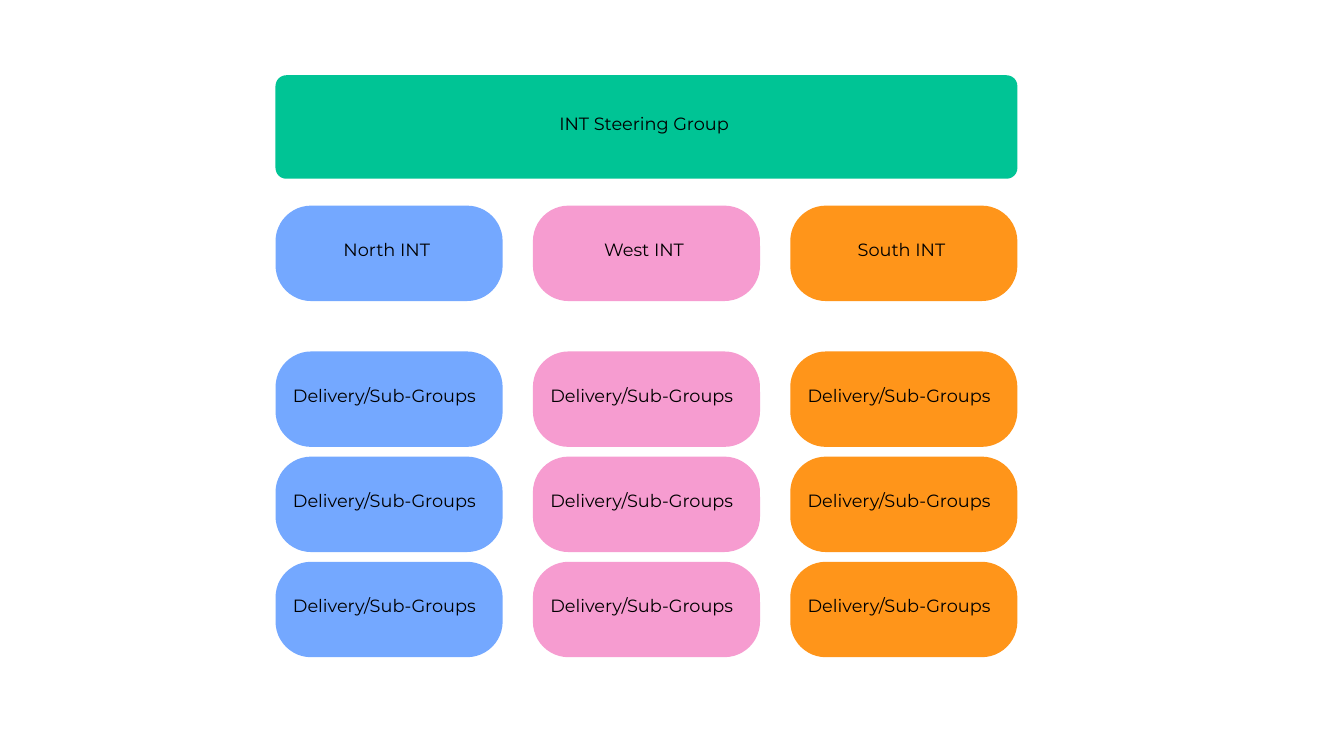
from pptx import Presentation
from pptx.dml.color import RGBColor
from pptx.enum.shapes import MSO_SHAPE as Shape
from pptx.enum.text import MSO_ANCHOR as Anchor, PP_ALIGN as Align
from pptx.util import Inches, Pt

# Content
STEERING = ("INT Steering Group", "00C495")
TEAMS = [("North INT", "74A8FF"), ("West INT", "F69CD0"), ("South INT", "FF951A")]
SUBGROUPS = ["Delivery/Sub-Groups"] * 3

# Grid, in inches
LEFT, WIDTH = 4.1, 11.04
CARD_W, CARD_H = 3.38, 1.42
COLUMN_STEP = (WIDTH - CARD_W) / (len(TEAMS) - 1)
STEERING_TOP, STEERING_H = 1.12, 1.54
TEAM_TOP, SUBGROUP_TOP, ROW_STEP = 3.06, 5.23, 1.565
STEERING_RADIUS, CARD_RADIUS = 0.16, 0.53

# Larger right and bottom margins set the labels slightly up and left of centre
PAD, LIFT, SPACE = 0.06, 0.16, 0.07
FONT = {"name": "Montserrat", "size": Pt(19)}


def rgb(value):
    return RGBColor.from_string(value)


def add_card(slide, label, color, box, radius, shift=SPACE):
    card = slide.shapes.add_shape(Shape.ROUNDED_RECTANGLE, *map(Inches, box))
    card.adjustments[0] = radius / box[3]
    card.shadow.inherit = False
    card.fill.solid()
    card.fill.fore_color.rgb = rgb(color)
    card.line.fill.background()

    frame = card.text_frame
    layout = {
        "word_wrap": True,
        "vertical_anchor": Anchor.MIDDLE,
        "margin_left": Inches(PAD),
        "margin_top": Inches(PAD),
        "margin_right": Inches(PAD + shift),
        "margin_bottom": Inches(PAD + LIFT),
    }
    for key, value in layout.items():
        setattr(frame, key, value)

    paragraph = frame.paragraphs[0]
    paragraph.alignment = Align.CENTER
    paragraph.line_spacing = Pt(26.6)
    run = paragraph.add_run()
    run.text = label
    for key, value in FONT.items():
        setattr(run.font, key, value)
    run.font.color.rgb = rgb("000000")


def main():
    deck = Presentation()
    deck.slide_width, deck.slide_height = Inches(20), Inches(11.25)
    slide = deck.slides.add_slide(deck.slide_layouts[6])

    # Steering group across all columns
    add_card(slide, *STEERING, (LEFT, STEERING_TOP, WIDTH, STEERING_H), STEERING_RADIUS)

    # One column per team, with its sub-groups below
    for column, (team, color) in enumerate(TEAMS):
        x = LEFT + column * COLUMN_STEP
        add_card(slide, team, color, (x, TEAM_TOP, CARD_W, CARD_H), CARD_RADIUS)
        for row, subgroup in enumerate(SUBGROUPS):
            y = SUBGROUP_TOP + row * ROW_STEP
            add_card(slide, subgroup, color, (x, y, CARD_W, CARD_H), CARD_RADIUS, 2 * SPACE)

    deck.save("out.pptx")


if __name__ == "__main__":
    main()
